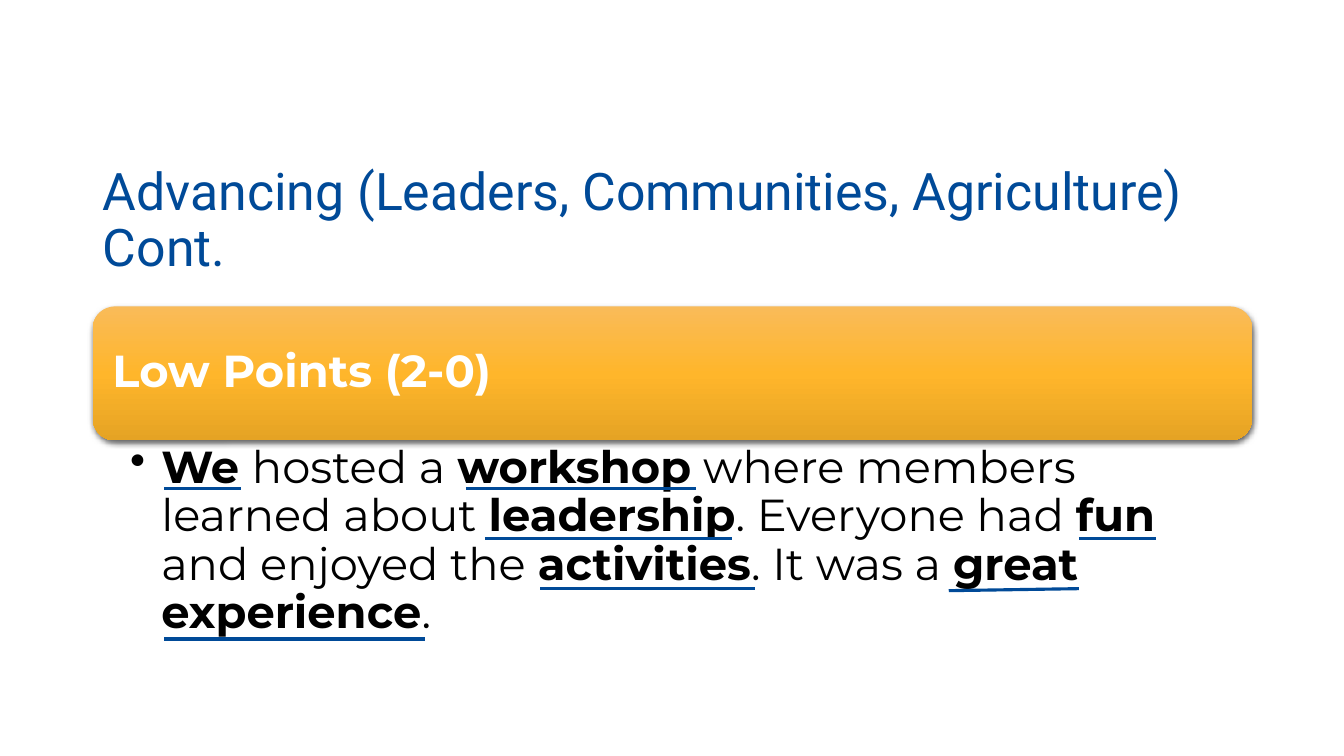
from dataclasses import dataclass

from lxml.etree import SubElement
from pptx import Presentation
from pptx.dml.color import RGBColor
from pptx.enum.shapes import MSO_CONNECTOR as CONN, MSO_SHAPE as SHAPE
from pptx.enum.text import MSO_ANCHOR as ANCHOR, MSO_AUTO_SIZE as AUTO, PP_ALIGN as ALIGN
from pptx.oxml import parse_xml
from pptx.oxml.ns import nsdecls, qn
from pptx.util import Inches, Pt


@dataclass(frozen=True)
class Theme:
    blue: str = "004A98"
    white: str = "FFFFFF"
    black: str = "000000"
    gold: tuple = ((0, "F9BB59"), (50, "FFB62B"), (100, "E5A324"))
    title_font: str = "Roboto"
    body_font: str = "Montserrat"
    title_size: int = 37
    body_size: int = 32
    line_width: float = 2.25


THEME = Theme()
LEFT, WIDTH = 0.92, 11.5
BODY = (
    ("We ", True), ("hosted a ", False), ("workshop", True),
    (" where members learned about ", False), ("leadership", True),
    (". Everyone had ", False), ("fun", True), (" and enjoyed the ", False),
    ("activities", True), (". It was a ", False), ("great experience", True),
    (".", False),
)
UNDERLINES = (
    (1.63, 4.85, 2.39, 4.85),
    (4.62, 4.85, 6.9, 4.85),
    (4.81, 5.34, 7.26, 5.34),
    (10.7, 5.34, 11.47, 5.34),
    (5.36, 5.84, 7.49, 5.84),
    (9.41, 5.86, 10.7, 5.84),
    (1.63, 6.34, 4.22, 6.34),
)


def setup_frame(tf, insets, anchor):
    tf.word_wrap = True
    tf.auto_size = AUTO.NONE
    tf.vertical_anchor = anchor
    tf.margin_left, tf.margin_top, tf.margin_right, tf.margin_bottom = map(Inches, insets)
    p = tf.paragraphs[0]
    p.alignment = ALIGN.LEFT
    p.line_spacing = 0.9
    p.space_before = Pt(0)
    return p


def add_run(p, text, *, color, size=THEME.body_size, font=THEME.body_font, bold=False):
    r = p.add_run()
    r.text = text
    r.font.name = font
    r.font.size = Pt(size)
    r.font.bold = bold
    r.font.color.rgb = RGBColor.from_string(color)


def add_title(s, text):
    sp = s.shapes.title
    sp.left, sp.top, sp.width, sp.height = map(Inches, (LEFT, 1.76, WIDTH, 0.87))
    p = setup_frame(sp.text_frame, (0.1, 0.05, 0.1, 0.05), ANCHOR.MIDDLE)
    add_run(p, text, color=THEME.blue, size=THEME.title_size, font=THEME.title_font)


def set_gradient(sp, stops):
    gs = "".join(
        f'<a:gs pos="{pos * 1000}"><a:srgbClr val="{color}"/></a:gs>' for pos, color in stops
    )
    sp.fill.background()
    old = sp.element.spPr.find(qn("a:noFill"))
    old.getparent().replace(old, parse_xml(
        f'<a:gradFill {nsdecls("a")} rotWithShape="1"><a:gsLst>{gs}</a:gsLst>'
        '<a:lin ang="5400000" scaled="0"/></a:gradFill>'
    ))


def add_shadow(sp):
    sp.element.spPr.append(parse_xml(
        f'<a:effectLst {nsdecls("a")}><a:outerShdw blurRad="{Pt(4.5)}" dist="{Pt(1.5)}" '
        f'dir="5400000" algn="ctr" rotWithShape="0"><a:srgbClr val="{THEME.black}">'
        '<a:alpha val="63000"/></a:srgbClr></a:outerShdw></a:effectLst>'
    ))


def add_banner(s, text):
    sp = s.shapes.add_shape(SHAPE.ROUNDED_RECTANGLE, *map(Inches, (LEFT, 3.04, WIDTH, 1.33)))
    sp.line.fill.background()
    set_gradient(sp, THEME.gold)
    add_shadow(sp)
    p = setup_frame(sp.text_frame, (0.13,) * 4, ANCHOR.MIDDLE)
    add_run(p, text, color=THEME.white, bold=True)


def add_bullet(s, runs):
    sp = s.shapes.add_textbox(*map(Inches, (LEFT, 4.37, WIDTH, 2.06)))
    p = setup_frame(sp.text_frame, (0.37, 0.04, 0.25, 0.04), ANCHOR.TOP)
    p.level = 1
    pPr = p._p.get_or_add_pPr()
    pPr.set("marL", str(Inches(0.31)))
    pPr.set("indent", str(-Inches(0.31)))
    SubElement(pPr, qn("a:buChar")).set("char", "•")
    for text, bold in runs:
        add_run(p, text, color=THEME.black, bold=bold)


def add_underline(s, ends):
    line = s.shapes.add_connector(CONN.STRAIGHT, *map(Inches, ends))
    line.line.color.rgb = RGBColor.from_string(THEME.blue)
    line.line.width = Pt(THEME.line_width)
    SubElement(line.element.spPr, qn("a:effectLst"))


def main():
    prs = Presentation()
    prs.slide_width, prs.slide_height = Inches(13.33), Inches(7.5)
    s = prs.slides.add_slide(prs.slide_layouts[5])
    add_title(s, "Advancing (Leaders, Communities, Agriculture) Cont.")
    add_banner(s, "Low Points (2-0)")
    add_bullet(s, BODY)
    for ends in UNDERLINES:
        add_underline(s, ends)
    prs.save("out.pptx")


if __name__ == "__main__":
    main()
